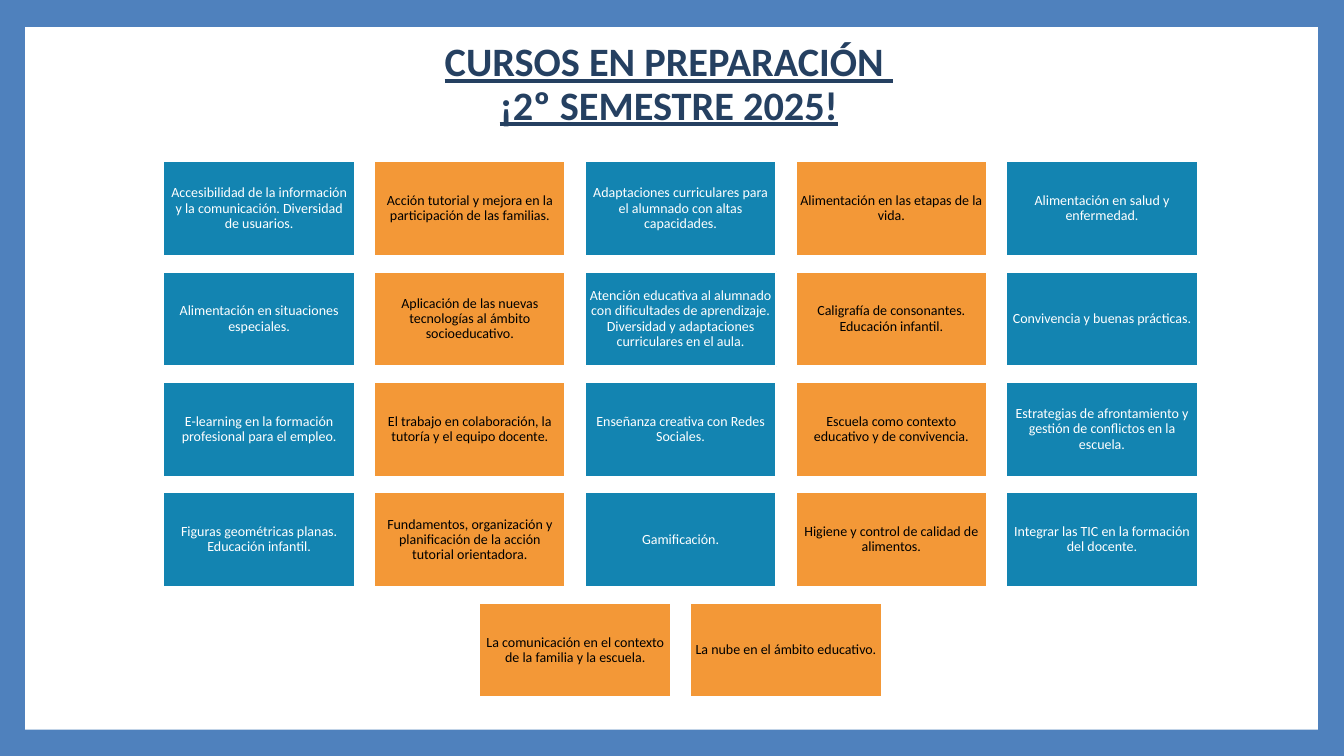
from pptx import Presentation
from pptx.dml.color import RGBColor
from pptx.enum.shapes import MSO_SHAPE as Shape
from pptx.enum.text import MSO_ANCHOR as Anchor, PP_ALIGN as Align
from pptx.util import Inches, Pt

TITLE = ["CURSOS EN PREPARACIÓN ", "¡2º SEMESTRE 2025!"]
COURSE_ROWS = [
    ["Accesibilidad de la información y la comunicación. Diversidad de usuarios.",
     "Acción tutorial y mejora en la participación de las familias.",
     "Adaptaciones curriculares para el alumnado con altas capacidades.",
     "Alimentación en las etapas de la vida.",
     "Alimentación en salud y enfermedad."],
    ["Alimentación en situaciones especiales.",
     "Aplicación de las nuevas tecnologías al ámbito socioeducativo.",
     "Atención educativa al alumnado con dificultades de aprendizaje. "
     "Diversidad y adaptaciones curriculares en el aula.",
     "Caligrafía de consonantes. Educación infantil.",
     "Convivencia y buenas prácticas."],
    ["E-learning en la formación profesional para el empleo.",
     "El trabajo en colaboración, la tutoría y el equipo docente.",
     "Enseñanza creativa con Redes Sociales.",
     "Escuela como contexto educativo y de convivencia.",
     "Estrategias de afrontamiento y gestión de conflictos en la escuela."],
    ["Figuras geométricas planas. Educación infantil.",
     "Fundamentos, organización y planificación de la acción tutorial orientadora.",
     "Gamificación.",
     "Higiene y control de calidad de alimentos.",
     "Integrar las TIC en la formación del docente."],
    ["La comunicación en el contexto de la familia y la escuela.",
     "La nube en el ámbito educativo."],
]

FRAME_BLUE = RGBColor(0x4F, 0x81, 0xBD)
NAVY = RGBColor(0x25, 0x40, 0x61)
TEAL = RGBColor(0x13, 0x84, 0xB1)
ORANGE = RGBColor(0xF3, 0x98, 0x37)
WHITE = RGBColor(0xFF, 0xFF, 0xFF)
BLACK = RGBColor(0x00, 0x00, 0x00)
FONT = "Calibri"

CARD_WIDTH, CARD_HEIGHT = 1.9, 0.94
STEP_X, STEP_Y = 2.09, 1.095
GRID_CENTER, GRID_TOP = 6.75, 1.6


def add_rectangle(page, left, top, width, height, fill):
    box = page.shapes.add_shape(Shape.RECTANGLE, Inches(left), Inches(top),
                                Inches(width), Inches(height))
    box.shadow.inherit = False
    box.fill.solid()
    box.fill.fore_color.rgb = fill
    box.line.fill.background()
    return box


def write_lines(box, lines, size, color, anchor, bold=None, underline=None):
    """Fill the box with one centred paragraph, broken between the lines."""
    frame = box.text_frame
    frame.word_wrap = True
    frame.vertical_anchor = anchor
    para = frame.paragraphs[0]
    para.alignment = Align.CENTER
    para.line_spacing = 0.9
    for number, line in enumerate(lines):
        if number:
            para.add_line_break()
        span = para.add_run()
        span.text = line
        font = span.font
        font.name, font.size = FONT, Pt(size)
        font.bold, font.underline = bold, underline
        font.color.rgb = color


def add_card(page, left, top, course, fill, color):
    card = add_rectangle(page, left, top, CARD_WIDTH, CARD_HEIGHT, fill)
    card.line.color.rgb = WHITE
    card.line.width = Pt(1.5)
    frame = card.text_frame
    frame.margin_left = frame.margin_right = Inches(0.04)
    frame.margin_top = frame.margin_bottom = Inches(0.04)
    write_lines(card, [course], 10, color, Anchor.MIDDLE)


def main():
    deck = Presentation()
    deck.slide_width, deck.slide_height = Inches(13.33), Inches(7.5)
    page = deck.slides.add_slide(deck.slide_layouts[6])
    page.background.fill.solid()
    page.background.fill.fore_color.rgb = FRAME_BLUE
    add_rectangle(page, 0.25, 0.27, 12.82, 6.97, WHITE)

    title = page.shapes.add_textbox(Inches(-0.03), Inches(0.69),
                                    Inches(13.33), Inches(0.64))
    write_lines(title, TITLE, 28.8, NAVY, Anchor.BOTTOM, True, True)

    full_width = len(COURSE_ROWS[0])
    for row, courses in enumerate(COURSE_ROWS):
        # Every row is centred; full rows alternate colours, the last is orange.
        left = GRID_CENTER - ((len(courses) - 1) * STEP_X + CARD_WIDTH) / 2
        for column, course in enumerate(courses):
            is_orange = column % 2 == 1 or len(courses) < full_width
            fill, color = (ORANGE, BLACK) if is_orange else (TEAL, WHITE)
            add_card(page, left + column * STEP_X, GRID_TOP + row * STEP_Y,
                     course, fill, color)

    deck.save("out.pptx")


if __name__ == "__main__":
    main()
